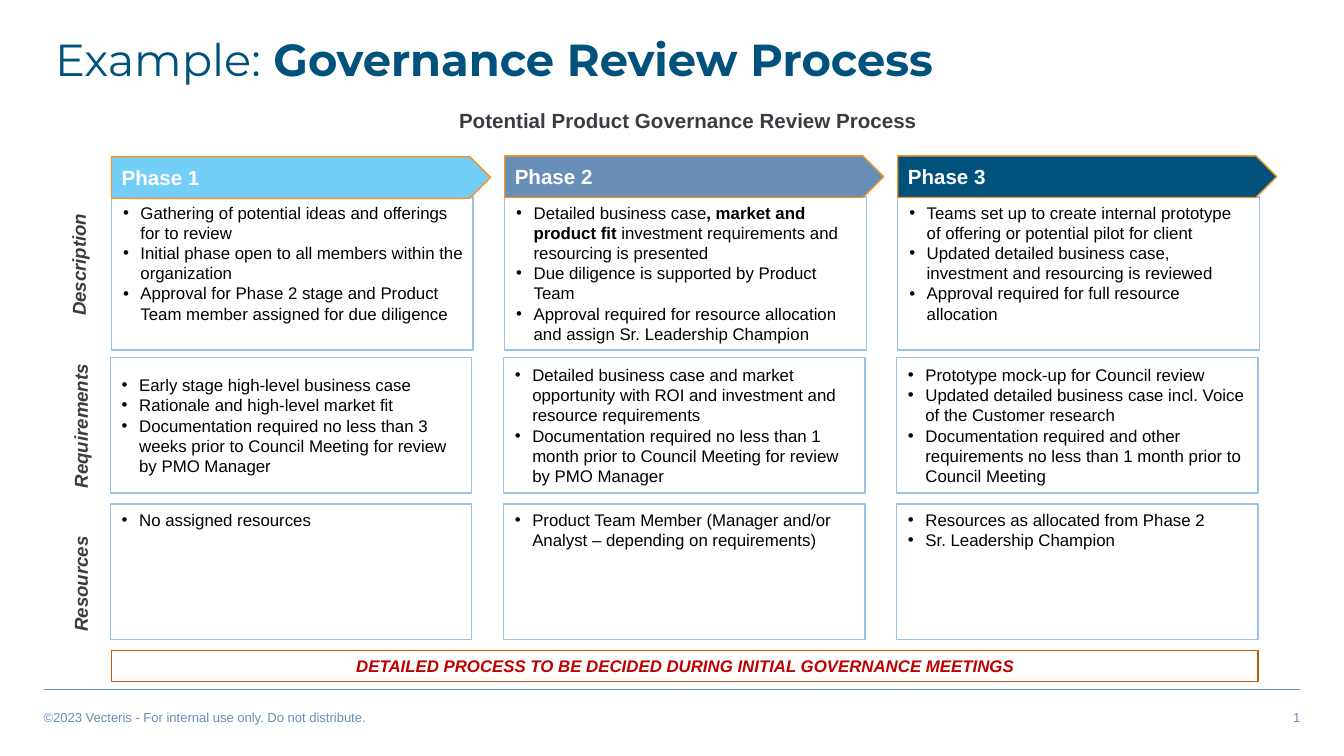
from lxml import etree
from pptx import Presentation
from pptx.dml.color import RGBColor
from pptx.enum.shapes import MSO_CONNECTOR, MSO_SHAPE
from pptx.enum.text import MSO_ANCHOR, PP_ALIGN
from pptx.oxml.ns import qn
from pptx.util import Pt

EMU_PER_PX = 4572  # 200 px to the inch
RECT, PENTAGON = MSO_SHAPE.RECTANGLE, MSO_SHAPE.PENTAGON
TOP, MIDDLE = MSO_ANCHOR.TOP, MSO_ANCHOR.MIDDLE
LEFT, CENTER, RIGHT = PP_ALIGN.LEFT, PP_ALIGN.CENTER, PP_ALIGN.RIGHT

NAVY, STEEL, SKY = "00517C", "668EB9", "73CFF8"
ORANGE, RUST, RED = "F6921E", "C55A11", "C00000"
PALE_BLUE, GRAY, BLACK, WHITE = "9CC2E5", "3A3C41", "000000", "FFFFFF"

SIDE_INSET, EDGE_INSET = 15, 8
COLUMN_X, COLUMN_STEP, BOX_WIDTH = 166, 585, 538
# Row: label, label centre (x, y), box offset, top, height
ROWS = [
    ("Description", (116, 394), 0, 293, 228),
    ("Requirements", (119, 634), -2, 532, 202),
    ("Resources", (119, 869), -2, 750, 202),
]
# Phase: name, colour, arrow top, one list of bullets for each row
PHASES = [
    ("Phase 1", SKY, 233, [
        ["Gathering of potential ideas and offerings for to review",
         "Initial phase open to all members within the organization",
         "Approval for Phase 2 stage and Product Team member assigned for due diligence"],
        ["Early stage high-level business case",
         "Rationale and high-level market fit",
         "Documentation required no less than 3 weeks prior to Council Meeting "
         "for review by PMO Manager"],
        ["No assigned resources"],
    ]),
    ("Phase 2", STEEL, 232, [
        [("Detailed business case", ", market and product fit ",
          "investment requirements and resourcing is presented"),
         "Due diligence is supported by Product Team",
         "Approval required for resource allocation and assign Sr. Leadership Champion"],
        ["Detailed business case and market opportunity with ROI and investment "
         "and resource requirements",
         "Documentation required no less than 1 month prior to Council Meeting "
         "for review by PMO Manager"],
        ["Product Team Member (Manager and/or Analyst – depending on requirements)"],
    ]),
    ("Phase 3", NAVY, 232, [
        ["Teams set up to create internal prototype of offering or potential pilot for client",
         "Updated detailed business case, investment and resourcing is reviewed",
         "Approval required for full resource allocation"],
        ["Prototype mock-up for Council review",
         "Updated detailed business case incl. Voice of the Customer research",
         "Documentation required and other requirements no less than 1 month "
         "prior to Council Meeting"],
        ["Resources as allocated from Phase 2", "Sr. Leadership Champion"],
    ]),
]


def px(length):
    return round(length * EMU_PER_PX)


def rgb(color):
    return RGBColor.from_string(color)


def set_up_frame(frame, anchor=TOP, right_inset=SIDE_INSET):
    frame.word_wrap = True
    frame.vertical_anchor = anchor
    frame.margin_left, frame.margin_right = px(SIDE_INSET), px(right_inset)
    frame.margin_top = frame.margin_bottom = px(EDGE_INSET)


def add_run(paragraph, text, size, color, bold=False, italic=False, font="Arial"):
    run = paragraph.add_run()
    run.text = text
    run.font.name = font
    run.font.size = Pt(size)
    run.font.bold, run.font.italic = bold, italic
    run.font.color.rgb = rgb(color)


def add_label(slide, box, align=LEFT, anchor=TOP):
    """Add an empty text box and return it with its first paragraph."""
    label = slide.shapes.add_textbox(*map(px, box))
    set_up_frame(label.text_frame, anchor)
    paragraph = label.text_frame.paragraphs[0]
    paragraph.alignment = align
    return label, paragraph


def add_panel(slide, kind, box, line, fill=None, anchor=TOP, right_inset=SIDE_INSET):
    panel = slide.shapes.add_shape(kind, *map(px, box))
    panel.shadow.inherit = False
    if fill:
        panel.fill.solid()
        panel.fill.fore_color.rgb = rgb(fill)
    else:
        panel.fill.background()
    panel.line.color.rgb = rgb(line)
    panel.line.width = Pt(0.75)
    set_up_frame(panel.text_frame, anchor, right_inset)
    panel.text_frame.paragraphs[0].alignment = LEFT
    return panel.text_frame


def make_bullet(paragraph):
    properties = paragraph._p.get_or_add_pPr()
    properties.set("marL", str(px(28)))
    properties.set("indent", str(px(-26)))
    bullet_color = etree.SubElement(properties, qn("a:buClr"))
    etree.SubElement(bullet_color, qn("a:srgbClr"), val=BLACK)
    etree.SubElement(properties, qn("a:buFont"), typeface="Arial")
    etree.SubElement(properties, qn("a:buChar"), char="•")


def add_bullets(frame, bullets):
    """Write bullets; in a tuple every second run is bold."""
    for index, bullet in enumerate(bullets):
        paragraph = frame.add_paragraph() if index else frame.paragraphs[0]
        paragraph.alignment = LEFT
        make_bullet(paragraph)
        runs = (bullet,) if isinstance(bullet, str) else bullet
        for position, text in enumerate(runs):
            add_run(paragraph, text, 9, BLACK, bold=position % 2 == 1)


def add_rule(slide, x1, x2, y):
    rule = slide.shapes.add_connector(MSO_CONNECTOR.STRAIGHT, px(x1), px(y), px(x2), px(y))
    rule.line.color.rgb = rgb(STEEL)
    rule.line.width = Pt(1)
    etree.SubElement(rule._element.spPr, qn("a:effectLst"))


def add_footer(slide):
    add_rule(slide, 66, 1934, 1026)
    for x, align, text in [
        (50, LEFT, "©2023 Vecteris - For internal use only. Do not distribute."),
        (1150, RIGHT, "1"),
    ]:
        _, paragraph = add_label(slide, (x, 1048, 800, 38), align)
        add_run(paragraph, text, 7, STEEL)


def add_headings(slide):
    _, title = add_label(slide, (67, 48, 1552, 114))
    title.line_spacing = 0.9
    add_run(title, "Example:", 24, NAVY, font="Montserrat")
    add_run(title, " Governance Review Process", 24, NAVY, bold=True, font="Montserrat")
    _, subtitle = add_label(slide, (592, 162, 864, 34), CENTER, MIDDLE)
    add_run(subtitle, "Potential Product Governance Review Process", 11, GRAY, bold=True)


def add_row_labels(slide):
    width, height = 262, 48
    for name, (center_x, center_y), *_ in ROWS:
        box = (center_x - width / 2, center_y - height / 2, width, height)
        label, paragraph = add_label(slide, box, CENTER)
        label.rotation = 270
        add_run(paragraph, name, 10, GRAY, bold=True, italic=True)


def add_phase(slide, column, name, color, arrow_top, cells):
    x = COLUMN_X + column * COLUMN_STEP
    for (row, _, offset, top, height), bullets in zip(ROWS, cells):
        anchor = MIDDLE if row == "Requirements" else TOP
        frame = add_panel(slide, RECT, (x + offset, top, BOX_WIDTH, height),
                          PALE_BLUE, anchor=anchor)
        add_bullets(frame, bullets)
    header = add_panel(slide, PENTAGON, (x, arrow_top, 564, 62), ORANGE, color,
                       MIDDLE, EDGE_INSET)
    add_run(header.paragraphs[0], name, 11, WHITE, bold=True)


def add_notice(slide):
    notice = add_panel(slide, RECT, (166, 968, 1706, 46), RUST).paragraphs[0]
    notice.alignment = CENTER
    add_run(notice, "DETAILED PROCESS TO BE DECIDED DURING INITIAL GOVERNANCE MEETINGS",
            9, RED, bold=True, italic=True)


def main():
    deck = Presentation()
    deck.slide_width, deck.slide_height = px(2000), px(1125)
    slide = deck.slides.add_slide(deck.slide_layouts[6])
    add_footer(slide)
    add_headings(slide)
    add_row_labels(slide)
    for column, phase in enumerate(PHASES):
        add_phase(slide, column, *phase)
    add_notice(slide)
    deck.save("out.pptx")


if __name__ == "__main__":
    main()
